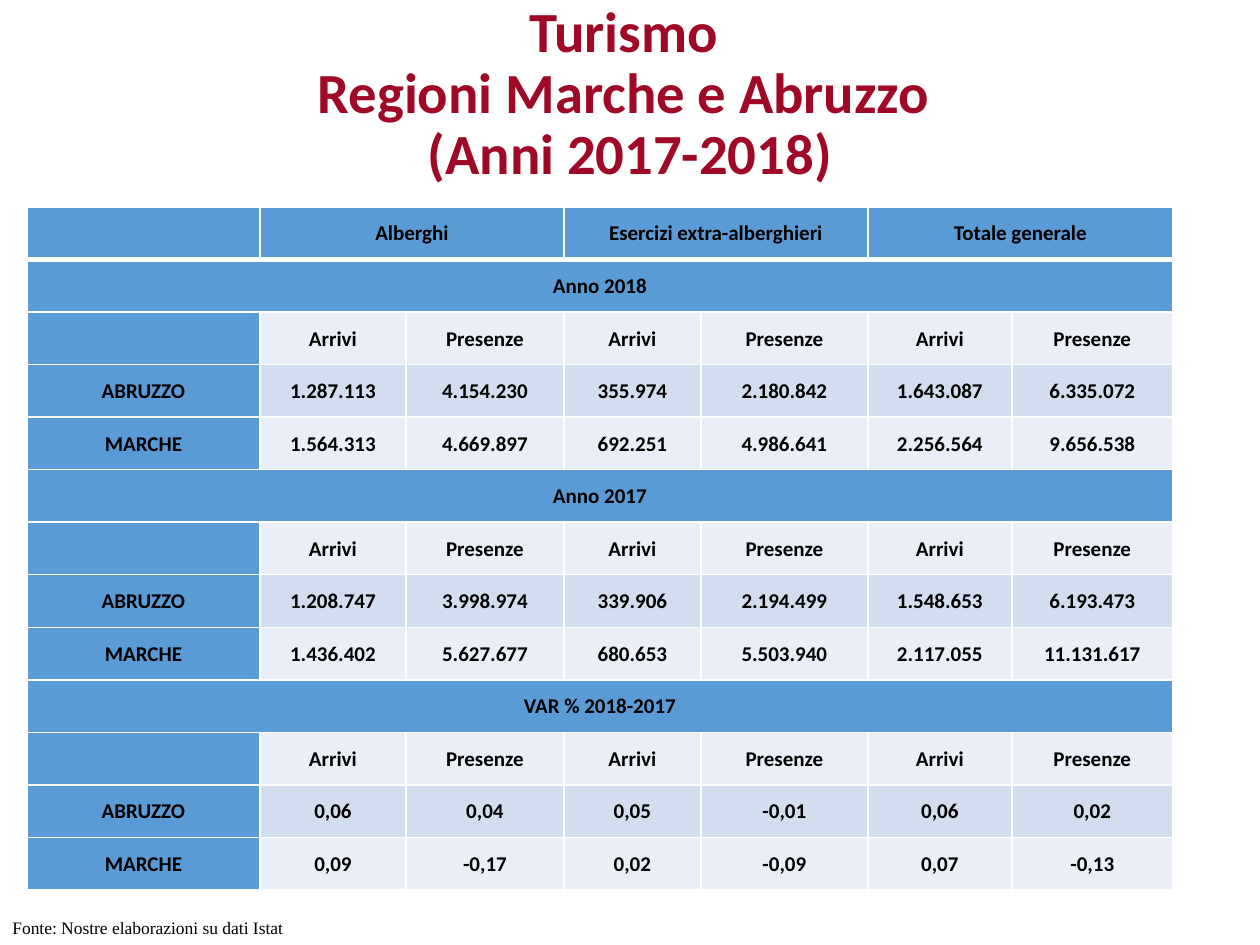
from dataclasses import dataclass

from lxml.etree import SubElement
from pptx import Presentation
from pptx.dml.color import RGBColor
from pptx.enum.text import MSO_ANCHOR as Anchor, PP_ALIGN as Align
from pptx.oxml.ns import qn
from pptx.util import Pt

SLIDE_W, SLIDE_H = 1260, 945
EMU_PER_PX = 914400 / 126
COLORS = {
    "title": "9F0926",
    "text": "000000",
    "border": "FFFFFF",
    "heading": "5B9BD5",
    "light": "EAEFF7",
    "band": "D2DEEF",
}
COLUMN_WIDTHS = (233, 146, 158, 137, 167, 144, 161)
GROUPS = ("Alberghi", "Esercizi extra-alberghieri", "Totale generale")
MEASURES = ("Arrivi", "Presenze") * len(GROUPS)


@dataclass(frozen=True)
class Box:
    left: int
    top: int
    width: int
    height: int


@dataclass(frozen=True)
class Section:
    heading: str
    abruzzo: tuple[str, ...]
    marche: tuple[str, ...]


@dataclass(frozen=True)
class Row:
    texts: tuple[str, ...]
    fill: str
    span_starts: tuple[int, ...] = ()
    span: int = 1


SECTIONS = (
    Section(
        "Anno 2018",
        ("1.287.113", "4.154.230", "355.974", "2.180.842", "1.643.087", "6.335.072"),
        ("1.564.313", "4.669.897", "692.251", "4.986.641", "2.256.564", "9.656.538"),
    ),
    Section(
        "Anno 2017",
        ("1.208.747", "3.998.974", "339.906", "2.194.499", "1.548.653", "6.193.473"),
        ("1.436.402", "5.627.677", "680.653", "5.503.940", "2.117.055", "11.131.617"),
    ),
    Section(
        "VAR % 2018-2017",
        ("0,06", "0,04", "0,05", "-0,01", "0,06", "0,02"),
        ("0,09", "-0,17", "0,02", "-0,09", "0,07", "-0,13"),
    ),
)


def px(length: float) -> int:
    return round(length * EMU_PER_PX)


def place(box: Box) -> tuple[int, ...]:
    return px(box.left), px(box.top), px(box.width), px(box.height)


def write(frame, text: str, *, size: float, font: str = "Calibri", color: str = "text",
          bold: bool = False, align=Align.LEFT, spacing: float = 1.0) -> None:
    paragraph = frame.paragraphs[0]
    paragraph.text = text
    paragraph.alignment = align
    paragraph.line_spacing = spacing
    for style in (paragraph.font, *(run.font for run in paragraph.runs)):
        style.size = Pt(size)
        style.name = font
        style.bold = bold
        style.color.rgb = RGBColor.from_string(COLORS[color])


def add_label(slide, box: Box, text: str, *, anchor=Anchor.TOP, **text_format) -> None:
    frame = slide.shapes.add_textbox(*place(box)).text_frame
    frame.word_wrap = True
    frame.vertical_anchor = anchor
    write(frame, text, **text_format)


def draw_borders(cell, top: float, bottom: float) -> None:
    properties = cell._tc.get_or_add_tcPr()
    for side, width in (("L", 1), ("R", 1), ("T", top), ("B", bottom)):
        line = SubElement(properties, qn(f"a:ln{side}"), w=str(Pt(width)))
        fill = SubElement(line, qn("a:solidFill"))
        SubElement(fill, qn("a:srgbClr"), val=COLORS["border"])


def table_rows() -> list[Row]:
    header = [""]
    for group in GROUPS:
        header += [group, ""]
    rows = [Row(tuple(header), "heading", (1, 3, 5), 2)]
    for section in SECTIONS:
        rows += [
            Row((section.heading,) + ("",) * len(MEASURES), "heading", (0,), len(COLUMN_WIDTHS)),
            Row(("", *MEASURES), "light"),
            Row(("ABRUZZO", *section.abruzzo), "band"),
            Row(("MARCHE", *section.marche), "light"),
        ]
    return rows


def add_tourism_table(slide, box: Box, rows: list[Row]) -> None:
    table = slide.shapes.add_table(len(rows), len(COLUMN_WIDTHS), *place(box)).table
    table.first_row = table.horz_banding = False
    for column, width in zip(table.columns, COLUMN_WIDTHS):
        column.width = px(width)
    for r, row in enumerate(rows):
        table.rows[r].height = px(box.height / len(rows))
        for c, text in enumerate(row.texts):
            cell = table.cell(r, c)
            cell.margin_left = cell.margin_right = cell.margin_top = px(1)
            cell.margin_bottom = 0
            cell.vertical_anchor = Anchor.MIDDLE
            draw_borders(cell, top=3 if r == 1 else 1, bottom=3 if r == 0 else 1)
            cell.fill.solid()
            fill = "heading" if c == 0 else row.fill
            cell.fill.fore_color.rgb = RGBColor.from_string(COLORS[fill])
            write(cell.text_frame, text, size=12, bold=True, align=Align.CENTER)
        for start in row.span_starts:
            table.cell(r, start).merge(table.cell(r, start + row.span - 1))


def main() -> None:
    deck = Presentation()
    deck.slide_width, deck.slide_height = px(SLIDE_W), px(SLIDE_H)
    slide = deck.slides.add_slide(deck.slide_layouts[6])
    add_label(slide, Box(0, 0, SLIDE_W, 190),
              "Turismo \vRegioni Marche e Abruzzo \v(Anni 2017-2018)",
              anchor=Anchor.MIDDLE, size=32.4, color="title", bold=True,
              align=Align.CENTER, spacing=0.9)
    add_tourism_table(slide, Box(27, 207, sum(COLUMN_WIDTHS), 683), table_rows())
    add_label(slide, Box(0, 911, SLIDE_W, 34), "Fonte: Nostre elaborazioni su dati Istat",
              size=10, font="Times New Roman")
    deck.save("out.pptx")


if __name__ == "__main__":
    main()
